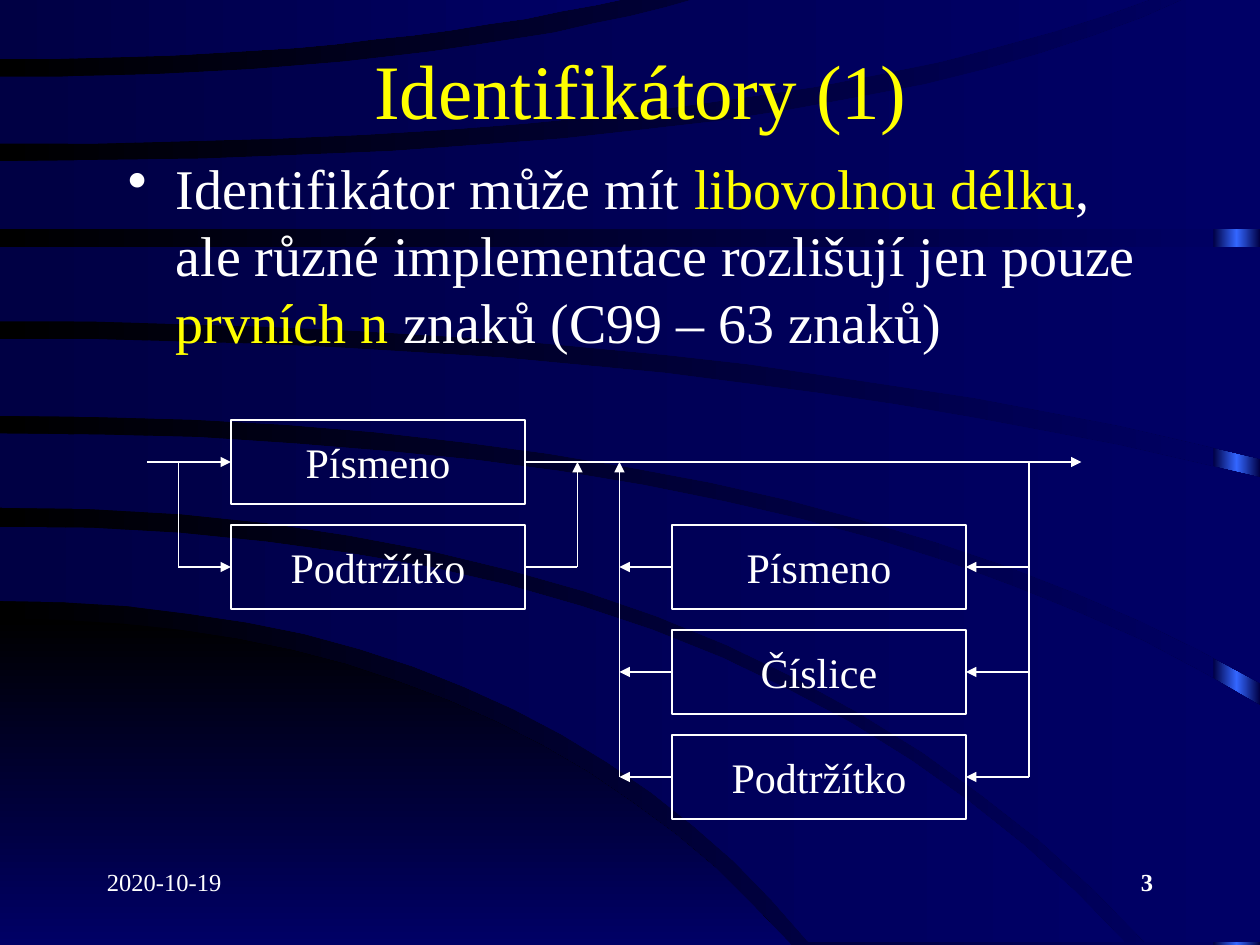
from copy import deepcopy
from lxml.etree import SubElement
from pptx import Presentation
from pptx.dml.color import RGBColor
from pptx.enum.shapes import MSO_CONNECTOR, MSO_SHAPE
from pptx.enum.text import MSO_ANCHOR, PP_ALIGN
from pptx.oxml.ns import qn
from pptx.util import Inches, Pt

FONT = "Times New Roman"
COLORS = {"black": "000000", "night": "000044", "navy": "000066",
          "glow": "3366FF", "white": "FFFFFF", "yellow": "FFFF00"}
COLUMNS, ROWS = 120, 90
WIDTH, HEIGHT = Inches(10), Inches(7.5)

TEXTS = [
    ((9, 82, 25, 6), [("2020-10-19", "white")], 14, PP_ALIGN.LEFT, MSO_ANCHOR.TOP, False),
    ((86, 82, 25, 6), [("3", "white")], 14, PP_ALIGN.RIGHT, MSO_ANCHOR.TOP, True),
    ((11, 3, 100, 11), [("Identifikátory (1)", "yellow")], 44, PP_ALIGN.CENTER,
     MSO_ANCHOR.MIDDLE, False),
]
BODY = ((11, 14, 100, 21), [
    ("Identifikátor může mít ", "white"), ("libovolnou délku", "yellow"),
    (", ale různé implementace rozlišují jen pouze ", "white"),
    ("prvních n", "yellow"), (" znaků (C99 – 63 znaků)", "white"),
], 32, PP_ALIGN.LEFT, MSO_ANCHOR.TOP, False)

FIRST, NEXT = 22, 64
BOX_WIDTH, BOX_HEIGHT = 28, 8
LINES = [44, 54, 64, 74]
ENTRY, FORK, JOIN, BACK, SPLIT, EXIT = 14, 17, 55, 59, 98, 103
BOXES = [
    ("Písmeno", FIRST, LINES[0]), ("Podtržítko", FIRST, LINES[1]),
    ("Písmeno", NEXT, LINES[1]), ("Číslice", NEXT, LINES[2]), ("Podtržítko", NEXT, LINES[3]),
]
PATHS = [
    ((ENTRY, LINES[0]), (FIRST, LINES[0]), True),
    ((FIRST + BOX_WIDTH, LINES[0]), (EXIT, LINES[0]), True),
    ((FORK, LINES[0]), (FORK, LINES[1]), False),
    ((FORK, LINES[1]), (FIRST, LINES[1]), True),
    ((FIRST + BOX_WIDTH, LINES[1]), (JOIN, LINES[1]), False),
    ((JOIN, LINES[1]), (JOIN, LINES[0]), True),
    ((SPLIT, LINES[0]), (SPLIT, LINES[3]), False),
    ((BACK, LINES[3]), (BACK, LINES[0]), True),
]
for line in LINES[1:]:
    PATHS.append(((SPLIT, line), (NEXT + BOX_WIDTH, line), True))
    PATHS.append(((NEXT, line), (BACK, line), True))

CURVE_STEPS = 16
HILL = {"upper": (491, 397, 628, 750), "lower": (750, 314, 628, 750)}
BANDS = [
    {"upper": (418, 590, 893, 748), "lower": (477, 416, 642, 748)},
    {"upper": (344, 650, 1000, 560), "lower": (403, 588, 909, 748)},
    {"upper": (269, 554, 1000, 379), "lower": (330, 628, 1000, 542)},
    {"upper": (196, 500, 1000, 196), "lower": (255, 564, 1000, 364)},
    {"upper": (128, 670, 943, -2), "lower": (182, 500, 1000, 182)},
    {"upper": (61, 338, 556, -2), "lower": (114, 616, 917, -2)},
    {"upper": (-2, 250, 501, -2), "lower": (47, 283, 501, -2)},
]


def across(columns):
    return round(WIDTH * columns / COLUMNS)


def down(rows):
    return round(HEIGHT * rows / ROWS)


def place(left, top, width, height):
    return across(left), down(top), across(width), down(height)


def rgb(name):
    return RGBColor.from_string(COLORS[name])


def shade(fill, names, angle=0):
    fill.gradient()
    fill.gradient_angle = angle
    for stop, name in zip(fill.gradient_stops, names):
        stop.color.rgb = rgb(name)


def curve(start, bend, end_x, end_y):
    points = []
    for step in range(CURVE_STEPS + 1):
        share = step / CURVE_STEPS
        x = 2 * share * (1 - share) * bend + share ** 2 * end_x
        y = start + share ** 2 * (end_y - start)
        points.append((round(x), round(y)))
    return points


def outline(band):
    upper, lower = curve(*band["upper"]), curve(*band["lower"])
    nearer, farther = sorted([upper[-1], lower[-1]])
    return upper + [(farther[0], nearer[1])] + lower[::-1]


def add_band(page, band, names, angle=0):
    points = outline(band)
    builder = page.shapes.build_freeform(*points[0], scale=Inches(0.01))
    builder.add_line_segments(points[1:], close=True)
    shape = builder.convert_to_shape()
    shape.shadow.inherit = False
    shape.line.fill.background()
    shade(shape.fill, names, angle)


def add_edge(page):
    edge = page.shapes.add_shape(MSO_SHAPE.RECTANGLE, *place(115.56, 0, 4.44, ROWS))
    edge.shadow.inherit = False
    edge.line.fill.background()
    shade(edge.fill, ["night", "night"])
    first = edge.element.spPr.find(qn("a:gradFill")).find(qn("a:gsLst"))[0]
    middle = deepcopy(first)
    middle.set("pos", "50000")
    first.addnext(middle)
    edge.fill.gradient_stops[1].color.rgb = rgb("glow")


def write(box, spans, size, align, anchor, bold=False, wrap=True):
    frame = box.text_frame
    frame.word_wrap = wrap
    frame.vertical_anchor = anchor
    para = frame.paragraphs[0]
    para.alignment = align
    for text, color in spans:
        span = para.add_run()
        span.text = text
        span.font.name, span.font.size, span.font.bold = FONT, Pt(size), bold
        span.font.color.rgb = rgb(color)
    return para


def add_text(page, area, *style):
    return write(page.shapes.add_textbox(*place(*area)), *style)


def add_box(page, text, left, middle):
    area = place(left, middle - BOX_HEIGHT / 2, BOX_WIDTH, BOX_HEIGHT)
    box = page.shapes.add_shape(MSO_SHAPE.RECTANGLE, *area)
    box.shadow.inherit = False
    box.fill.background()
    box.line.color.rgb = rgb("white")
    box.line.width = Pt(0.75)
    write(box, [(text, "white")], 24, PP_ALIGN.CENTER, MSO_ANCHOR.MIDDLE, wrap=False)
    return box


def add_path(page, start, end, arrow, sides):
    path = page.shapes.add_connector(MSO_CONNECTOR.STRAIGHT, across(start[0]), down(start[1]),
                                     across(end[0]), down(end[1]))
    path.line.color.rgb = rgb("white")
    path.line.width = Pt(0.75)
    if start in sides:
        path.begin_connect(*sides[start])
    if end in sides:
        path.end_connect(*sides[end])
    properties = path.element.spPr
    if arrow:
        SubElement(properties.find(qn("a:ln")), qn("a:tailEnd"), type="triangle")
    SubElement(properties, qn("a:effectLst"))


def main():
    deck = Presentation()
    deck.slide_width, deck.slide_height = WIDTH, HEIGHT
    page = deck.slides.add_slide(deck.slide_layouts[6])
    shade(page.background.fill, ["black", "navy"])
    add_edge(page)
    add_band(page, HILL, ["black", "navy"], 270)
    for band in BANDS:
        add_band(page, band, ["night", "navy"])
    for text in TEXTS:
        add_text(page, *text)
    body = add_text(page, *BODY)
    body.space_before = Pt(6.4)
    indents = body._p.get_or_add_pPr()
    indents.set("marL", str(Inches(0.38)))
    indents.set("indent", str(-Inches(0.38)))
    SubElement(indents, qn("a:buChar"), char="•")
    sides = {}
    for text, left, middle in BOXES:
        box = add_box(page, text, left, middle)
        sides[left, middle] = (box, 1)
        sides[left + BOX_WIDTH, middle] = (box, 3)
    for start, end, arrow in PATHS:
        add_path(page, start, end, arrow, sides)
    deck.save("out.pptx")


if __name__ == "__main__":
    main()
